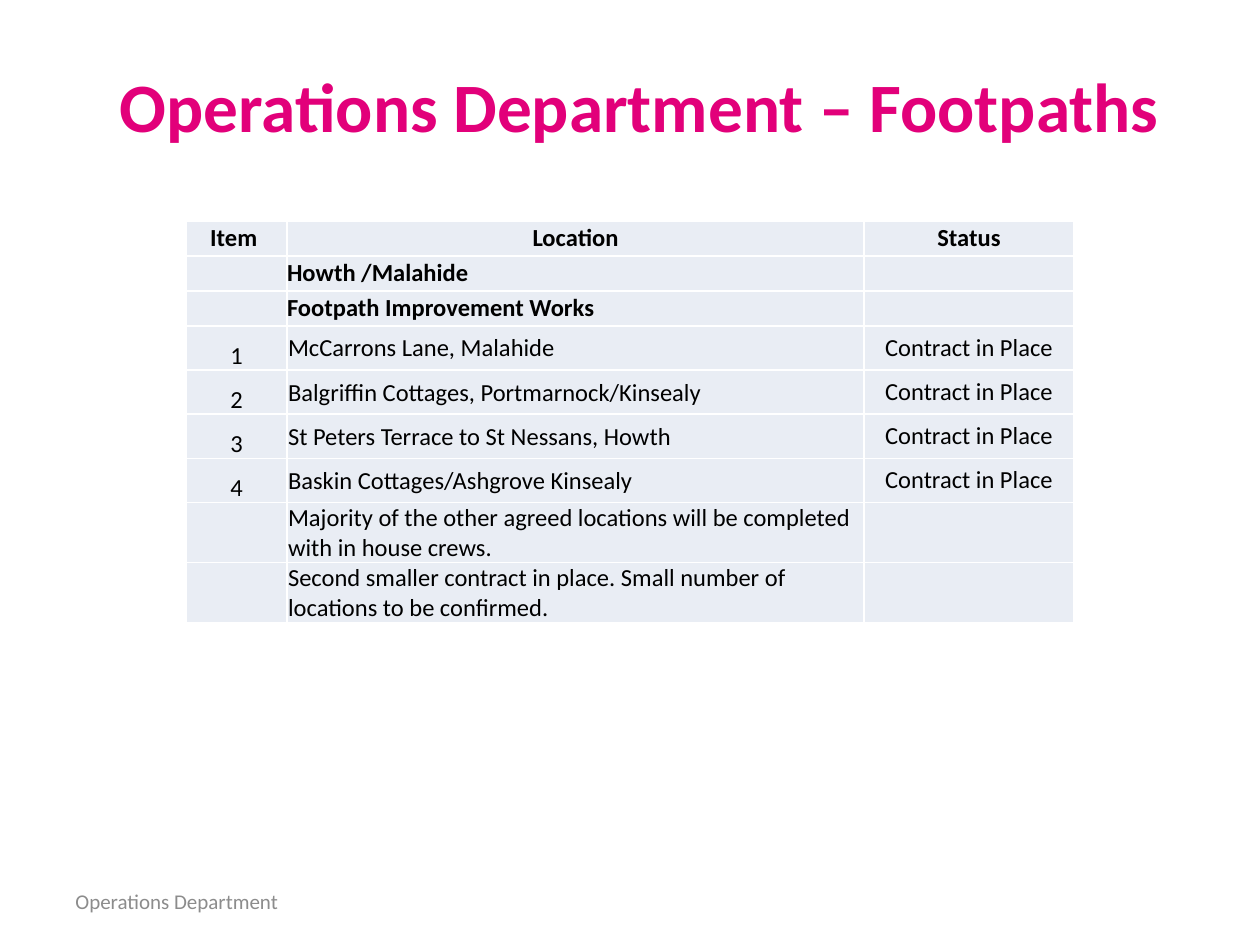
from pptx import Presentation
from pptx.dml.color import RGBColor
from pptx.enum.text import MSO_ANCHOR as Anchor, PP_ALIGN as Align
from pptx.oxml import parse_xml
from pptx.oxml.ns import nsdecls
from pptx.util import Emu, Pt

FONT = "Calibri"
PINK, GREY, BLACK = "E2007A", "8C8C8C", "000000"
PALE, WHITE = "E9EDF4", "FFFFFF"

COLS = [101, 577, 210]
ROWS = [35] * 3 + [39] * 6
HEAD = ["Item ", "Location", "Status"]
GROUPS = ["Howth /Malahide", "Footpath Improvement Works"]
PATHS = [
    "McCarrons Lane, Malahide",
    "Balgriffin Cottages, Portmarnock/Kinsealy",
    "St Peters Terrace to St Nessans, Howth",
    "Baskin Cottages/Ashgrove Kinsealy",
]
NOTES = [
    "Majority of the other agreed locations will be completed with in house crews.",
    "Second smaller contract in place. Small number of locations to be confirmed.",
]


def px(n):
    return Emu(round(n * 914400 / 126))


def color(code):
    return RGBColor.from_string(code)


def add_run(para, text, size, code, bold=False):
    run = para.add_run()
    run.text = text
    font = run.font
    font.name, font.size, font.bold = FONT, Pt(size), bold
    font.color.rgb = color(code)


def place(shape, box):
    shape.left, shape.top, shape.width, shape.height = map(px, box)


def add_title(slide, box):
    title = slide.shapes.title
    place(title, box)
    frame = title.text_frame
    frame.word_wrap = True
    frame.vertical_anchor = Anchor.MIDDLE
    para = frame.paragraphs[0]
    para.alignment = Align.CENTER
    add_run(para, "Operations Department – Footpaths", 39.6, PINK, True)


def add_footer(slide, box):
    frame = slide.shapes.add_textbox(*map(px, box)).text_frame
    frame.word_wrap = True
    frame.vertical_anchor = Anchor.MIDDLE
    add_run(frame.paragraphs[0], "Operations Department", 12, GREY)


def add_edges(cell):
    """Draw a white 1 pt line on each side of the cell."""
    props = cell._tc.get_or_add_tcPr()
    for i, side in enumerate(("lnL", "lnR", "lnT", "lnB")):
        props.insert(i, parse_xml(
            f'<a:{side} {nsdecls("a")} w="{Pt(1)}"><a:solidFill>'
            f'<a:srgbClr val="{WHITE}"/></a:solidFill></a:{side}>'))


def fill_cell(cell, text, bold, centre, inset, spacing):
    cell.fill.solid()
    cell.fill.fore_color.rgb = color(PALE)
    add_edges(cell)
    cell.vertical_anchor = Anchor.MIDDLE
    cell.margin_left = cell.margin_right = cell.margin_top = px(inset)
    cell.margin_bottom = 0
    para = cell.text_frame.paragraphs[0]
    if centre:
        para.alignment = Align.CENTER
    if spacing:
        para.line_spacing = spacing
    if text:
        add_run(para, text, 14, BLACK, bold)
    else:
        para._p.get_or_add_endParaRPr().set("sz", "1400")


def add_works(slide, box):
    data = [HEAD]
    data += [["", name, ""] for name in GROUPS]
    data += [[str(n), name, "Contract in Place"]
             for n, name in enumerate(PATHS, 1)]
    data += [["", note, ""] for note in NOTES]
    top = 1 + len(GROUPS)

    frame = slide.shapes.add_table(len(data), len(COLS), *map(px, box))
    table = frame.table
    table.first_row = table.horz_banding = False
    for col, width in zip(table.columns, COLS):
        col.width = px(width)
    for row, height in zip(table.rows, ROWS):
        row.height = px(height)
    for r, line in enumerate(data):
        for c, text in enumerate(line):
            fill_cell(table.cell(r, c), text,
                      bold=r < top,
                      centre=r == 0 or c != 1,
                      inset=1 if r >= top and c == 1 else 0,
                      spacing=1.5 if c == 0 and r >= top and text else None)


def main():
    deck = Presentation()
    deck.slide_width, deck.slide_height = px(1260), px(945)
    slide = deck.slides.add_slide(deck.slide_layouts[5])
    add_footer(slide, (63, 876, 357, 50))
    add_works(slide, (186, 221, sum(COLS), sum(ROWS)))
    add_title(slide, (72, 40, 1135, 129))
    deck.save("out.pptx")


if __name__ == "__main__":
    main()
